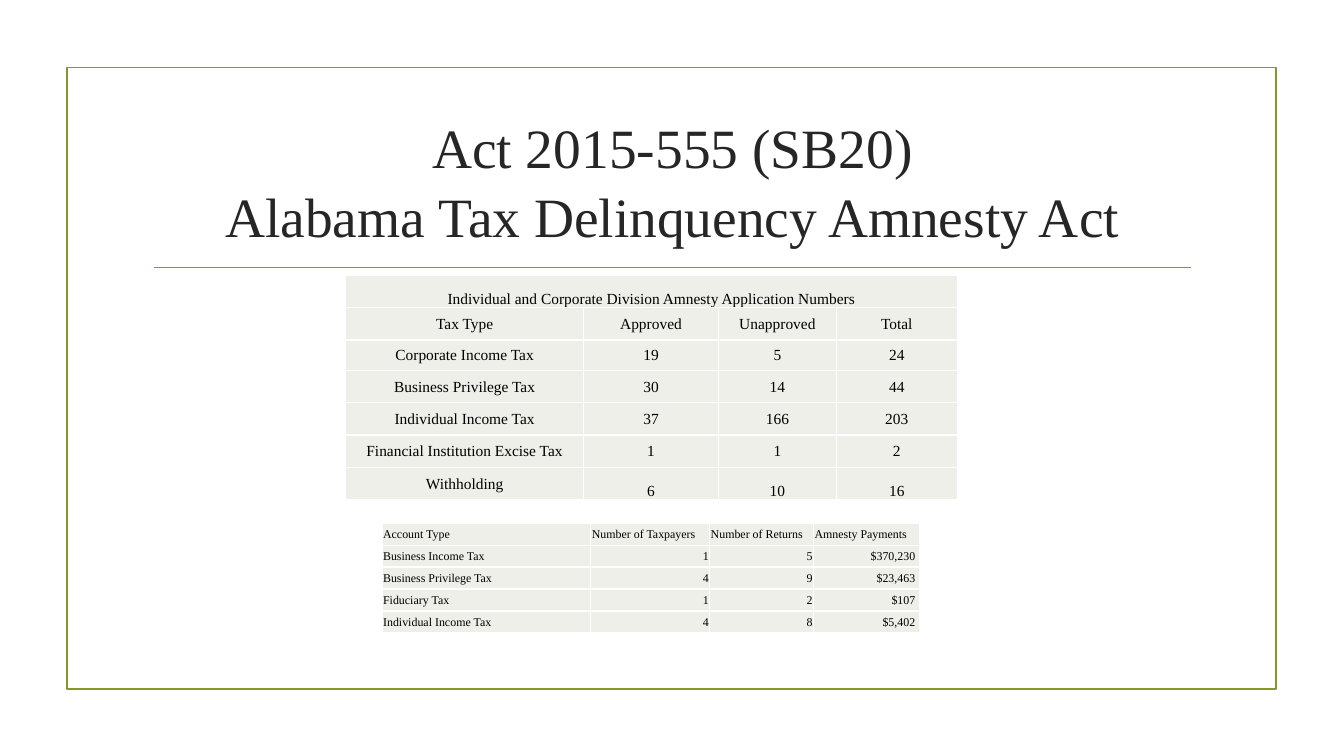
from lxml import etree
from pptx import Presentation
from pptx import util as u
from pptx.dml.color import RGBColor
from pptx.enum import shapes, text
from pptx.oxml import ns

COLORS = {"olive": "83992A", "title": "262626", "ink": "000000",
          "cell": "EDEFE8", "rule": "FFFFFF"}
FONT = "Times New Roman"
LEFT, CENTER, RIGHT = text.PP_ALIGN.LEFT, text.PP_ALIGN.CENTER, text.PP_ALIGN.RIGHT
MIDDLE, BOTTOM = text.MSO_ANCHOR.MIDDLE, text.MSO_ANCHOR.BOTTOM

SLIDE_W, SLIDE_H = u.Inches(13.33), u.Inches(7.5)

TITLE_LINES = ["Act 2015-555 (SB20)", "Alabama Tax Delinquency Amnesty Act"]
APPLICATIONS = [
    ["Individual and Corporate Division Amnesty Application Numbers", "", "", ""],
    ["Tax Type", "Approved", "Unapproved", "Total"],
    ["Corporate Income Tax", "19", "5", "24"],
    ["Business Privilege Tax", "30", "14", "44"],
    ["Individual Income Tax", "37", "166", "203"],
    ["Financial Institution Excise Tax", "1", "1", "2"],
    ["Withholding", "6", "10", "16"],
]
PAYMENTS = [
    ["Account Type", "Number of Taxpayers", "Number of Returns", "Amnesty Payments"],
    ["Business Income Tax", "1", "5", "$370,230"],
    ["Business Privilege Tax", "4", "9", "$23,463"],
    ["Fiduciary Tax", "1", "2", "$107"],
    ["Individual Income Tax", "4", "8", "$5,402"],
]


def color(name):
    return RGBColor.from_string(COLORS[name])


def share_box(left, top, width, height):
    """Turn percentages of the slide into a box of lengths."""
    return (int(SLIDE_W * left / 100), int(SLIDE_H * top / 100),
            int(SLIDE_W * width / 100), int(SLIDE_H * height / 100))


def write(frame, *lines, size, ink="ink", align=CENTER, spacing=1.0):
    paragraph = frame.paragraphs[0]
    paragraph.alignment = align
    paragraph.line_spacing = spacing
    for index, line in enumerate(lines):
        if index:
            paragraph.add_line_break()
        run = paragraph.add_run()
        run.text = line
        run.font.name = FONT
        run.font.size = u.Pt(size)
        run.font.color.rgb = color(ink)


def draw_frame(slide, box):
    frame = slide.shapes.add_shape(shapes.MSO_SHAPE.RECTANGLE, *box)
    frame.shadow.inherit = False
    frame.fill.background()
    frame.line.color.rgb = color("olive")
    frame.line.width = u.Pt(1.25)


def draw_title(slide, box):
    title = slide.shapes.add_textbox(*box).text_frame
    title.word_wrap = True
    title.vertical_anchor = MIDDLE
    write(title, *TITLE_LINES, size=39.6, ink="title", spacing=1.03)


def draw_title_rule(slide, box):
    left, top, width, _ = box
    rule = slide.shapes.add_connector(
        shapes.MSO_CONNECTOR.STRAIGHT, left, top, left + width, top)
    rule.line.color.rgb = color("olive")
    rule.line.width = u.Pt(1.25)
    etree.SubElement(rule._element.spPr, ns.qn("a:effectLst"))


def style_cell(cell, anchor, right_margin=0.01):
    """Fill the cell, tighten its margins and give it thin borders."""
    cell.fill.solid()
    cell.fill.fore_color.rgb = color("cell")
    cell.vertical_anchor = anchor
    cell.margin_left = cell.margin_top = u.Inches(0.01)
    cell.margin_right, cell.margin_bottom = u.Inches(right_margin), 0
    properties = cell._tc.get_or_add_tcPr()
    for index, side in enumerate(("lnL", "lnR", "lnT", "lnB")):
        border = etree.Element(ns.qn(f"a:{side}"), w=str(u.Pt(1)))
        fill = etree.SubElement(border, ns.qn("a:solidFill"))
        etree.SubElement(fill, ns.qn("a:srgbClr"), val=COLORS["rule"])
        properties.insert(index, border)


def add_grid(slide, box, rows, column_weights, row_weights):
    """Add a table whose columns and rows share the box by weight."""
    _, _, width, height = box
    table = slide.shapes.add_table(len(rows), len(column_weights), *box).table
    table.first_row = table.horz_banding = False
    for column, weight in zip(table.columns, column_weights):
        column.width = int(width * weight / sum(column_weights))
    for row, weight in zip(table.rows, row_weights):
        row.height = int(height * weight / sum(row_weights))
    return table


def draw_applications(slide, box):
    table = add_grid(slide, box, APPLICATIONS, [236, 134, 117, 120],
                     [32, 32, 30, 32, 32, 32, 32])
    table.cell(0, 0).merge(table.cell(0, 3))
    last = len(APPLICATIONS) - 1
    for r, row in enumerate(APPLICATIONS):
        for c, value in enumerate(row):
            cell = table.cell(r, c)
            low = r == 0 or (r == last and c > 0)
            style_cell(cell, BOTTOM if low else MIDDLE)
            if not cell.is_spanned:
                write(cell.text_frame, value, size=11)


def draw_payments(slide, box):
    table = add_grid(slide, box, PAYMENTS, [207, 118, 103, 105],
                     [1] * len(PAYMENTS))
    for r, row in enumerate(PAYMENTS):
        for c, value in enumerate(row):
            cell = table.cell(r, c)
            is_number = r > 0 and c > 0
            style_cell(cell, MIDDLE, 0.04 if is_number and c == 3 else 0.01)
            write(cell.text_frame, value, size=8.5,
                  align=RIGHT if is_number else LEFT)


def main():
    deck = Presentation()
    deck.slide_width, deck.slide_height = SLIDE_W, SLIDE_H
    slide = deck.slides.add_slide(deck.slide_layouts[6])
    draw_frame(slide, share_box(4.97, 8.93, 90, 82.27))
    draw_title_rule(slide, share_box(11.48, 35.4, 77.12, 0))
    draw_title(slide, share_box(10.65, 14.27, 78.77, 19.07))
    draw_applications(slide, share_box(25.73, 36.4, 45.5, 29.73))
    draw_payments(slide, share_box(28.43, 69.2, 39.98, 14.53))
    deck.save("out.pptx")


if __name__ == "__main__":
    main()
